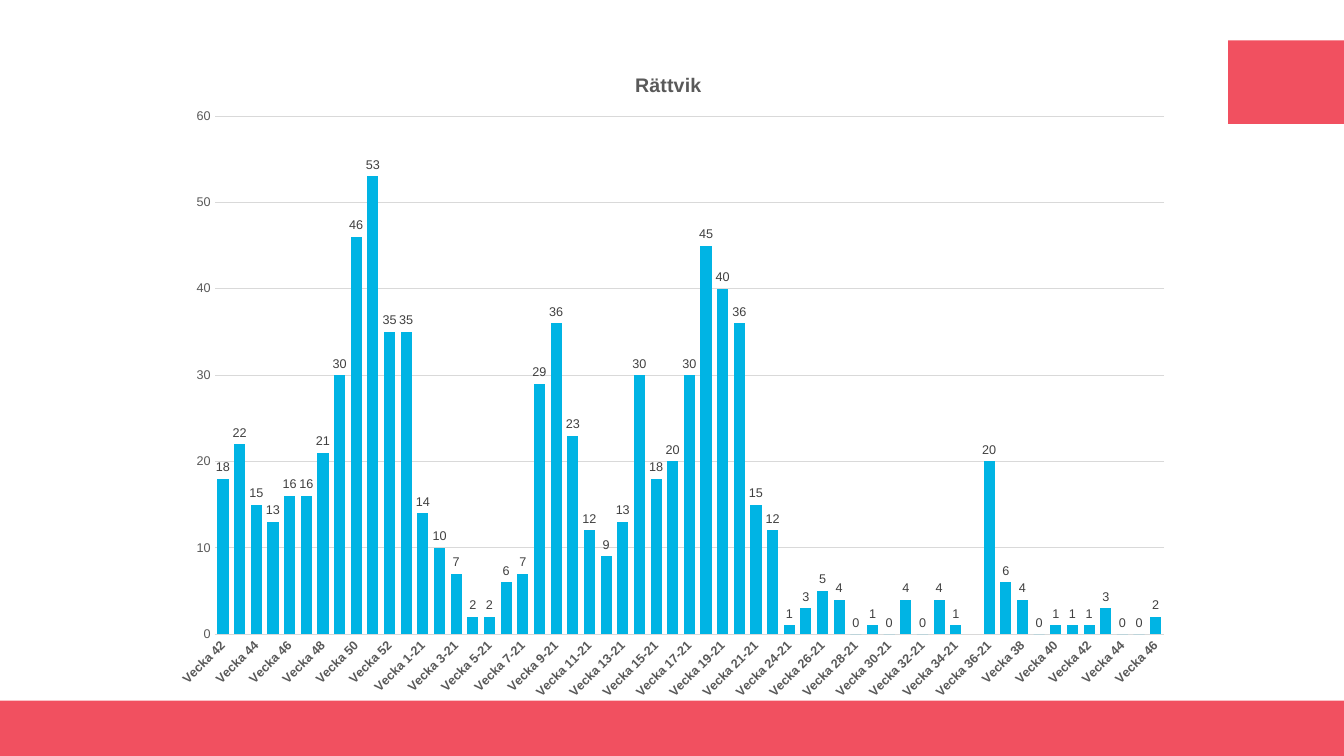
from lxml import etree
from pptx import Presentation
from pptx.chart.data import CategoryChartData
from pptx.dml.color import RGBColor
from pptx.enum.chart import XL_CHART_TYPE, XL_LABEL_POSITION, XL_TICK_MARK
from pptx.enum.shapes import MSO_SHAPE
from pptx.oxml.ns import qn
from pptx.util import Inches, Pt

COLUMN_CLUSTERED = XL_CHART_TYPE.COLUMN_CLUSTERED
OUTSIDE_END = XL_LABEL_POSITION.OUTSIDE_END
NO_TICKS = XL_TICK_MARK.NONE
RECTANGLE = MSO_SHAPE.RECTANGLE

FONT = "Arial"
COLORS = {
    "band": "F15060",
    "column": "00B4E4",
    "grid": "D9D9D9",
    "axis_text": "595959",
    "value_text": "404040",
    "text": "000000",
}
TITLE = "Rättvik"
# First week, last week, label suffix, cases per week
PERIODS = [
    (42, 53, "", [18, 22, 15, 13, 16, 16, 21, 30, 46, 53, 35, 35]),
    (1, 22, "-21", [14, 10, 7, 2, 2, 6, 7, 29, 36, 23, 12, 9, 13, 30, 18, 20,
                    30, 45, 40, 36, 15, 12]),
    (24, 36, "-21", [1, 3, 5, 4, 0, 1, 0, 4, 0, 4, 1, None, 20]),
    (37, 46, "", [6, 4, 0, 1, 1, 1, 3, 0, 0, 2]),
]
BANDS = [(0, 6.95, 13.33, 0.55), (12.18, 0.4, 1.15, 0.83)]
CHART_BOX = (1.58, 0.42, 10.18, 6.65)


def color(name):
    return RGBColor.from_string(COLORS[name])


def set_font(font, size, color_name, bold=False):
    font.name = FONT
    font.size = Pt(size)
    font.bold = bold
    font.color.rgb = color(color_name)


def set_line(line, color_name):
    line.color.rgb = color(color_name)
    line.width = Pt(0.75)


def add_child(parent, tag, value):
    return etree.SubElement(parent, qn(tag), val=str(value))


def set_layout(element, **fractions):
    """Place a chart part by fractions of the chart area."""
    layout = element.find(qn("c:layout"))
    if layout is None:
        layout = etree.Element(qn("c:layout"))
        text = element.find(qn("c:tx"))
        if text is None:
            element.insert(0, layout)
        else:
            text.addnext(layout)
    for child in list(layout):
        layout.remove(child)
    manual = etree.SubElement(layout, qn("c:manualLayout"))
    if "w" in fractions:
        add_child(manual, "c:layoutTarget", "inner")
    add_child(manual, "c:xMode", "edge")
    add_child(manual, "c:yMode", "edge")
    for name, fraction in fractions.items():
        add_child(manual, f"c:{name}", fraction)


def add_band(slide, box):
    band = slide.shapes.add_shape(RECTANGLE, *map(Inches, box))
    band.shadow.inherit = False
    band.fill.solid()
    band.fill.fore_color.rgb = color("band")
    band.line.fill.background()


def add_cases_chart(slide):
    data = CategoryChartData()
    data.categories = [f"Vecka {week}{suffix}"
                       for first, last, suffix, _ in PERIODS
                       for week in range(first, last + 1)]
    data.add_series("Series 1", [value for *_, values in PERIODS for value in values])
    frame = slide.shapes.add_chart(COLUMN_CLUSTERED, *map(Inches, CHART_BOX), data)
    chart = frame.chart
    set_font(chart.font, 10, "text")
    chart.has_legend = False
    chart.has_title = True
    chart.chart_title.include_in_layout = False
    paragraph = chart.chart_title.text_frame.paragraphs[0]
    paragraph.text = TITLE
    set_font(paragraph.font, 14, "axis_text", bold=True)
    set_layout(chart.chart_title._element, x=0.46, y=0.04)
    return chart


def format_columns(chart):
    plot = chart.plots[0]
    plot.gap_width = 50
    plot.overlap = -27
    plot.vary_by_categories = False
    series = plot.series[0]
    series.format.fill.solid()
    series.format.fill.fore_color.rgb = color("column")
    labels = series.data_labels
    labels.show_value = True
    labels.position = OUTSIDE_END
    set_font(labels.font, 9, "value_text")


def format_axes(chart):
    weeks, cases = chart.category_axis, chart.value_axis
    for axis in (weeks, cases):
        axis.major_tick_mark = axis.minor_tick_mark = NO_TICKS
        set_font(axis.tick_labels.font, 9, "axis_text", bold=axis is weeks)
    set_line(weeks.format.line, "grid")
    weeks._element.find(qn("c:txPr")).find(qn("a:bodyPr")).set("rot", "-2700000")
    skip = etree.Element(qn("c:tickLblSkip"), val="2")
    weeks._element.find(qn("c:noMultiLvlLbl")).addprevious(skip)
    cases.minimum_scale, cases.maximum_scale, cases.major_unit = 0, 60, 10
    cases.format.line.fill.background()
    set_line(cases.major_gridlines.format.line, "grid")
    plot_area = chart._chartSpace.chart.plotArea
    set_layout(plot_area, x=0.054, y=0.11, w=0.925, h=0.773)


def main():
    presentation = Presentation()
    presentation.slide_width = Inches(13.33)
    presentation.slide_height = Inches(7.5)
    slide = presentation.slides.add_slide(presentation.slide_layouts[6])
    for box in BANDS:
        add_band(slide, box)
    chart = add_cases_chart(slide)
    format_columns(chart)
    format_axes(chart)
    presentation.save("out.pptx")


if __name__ == "__main__":
    main()
